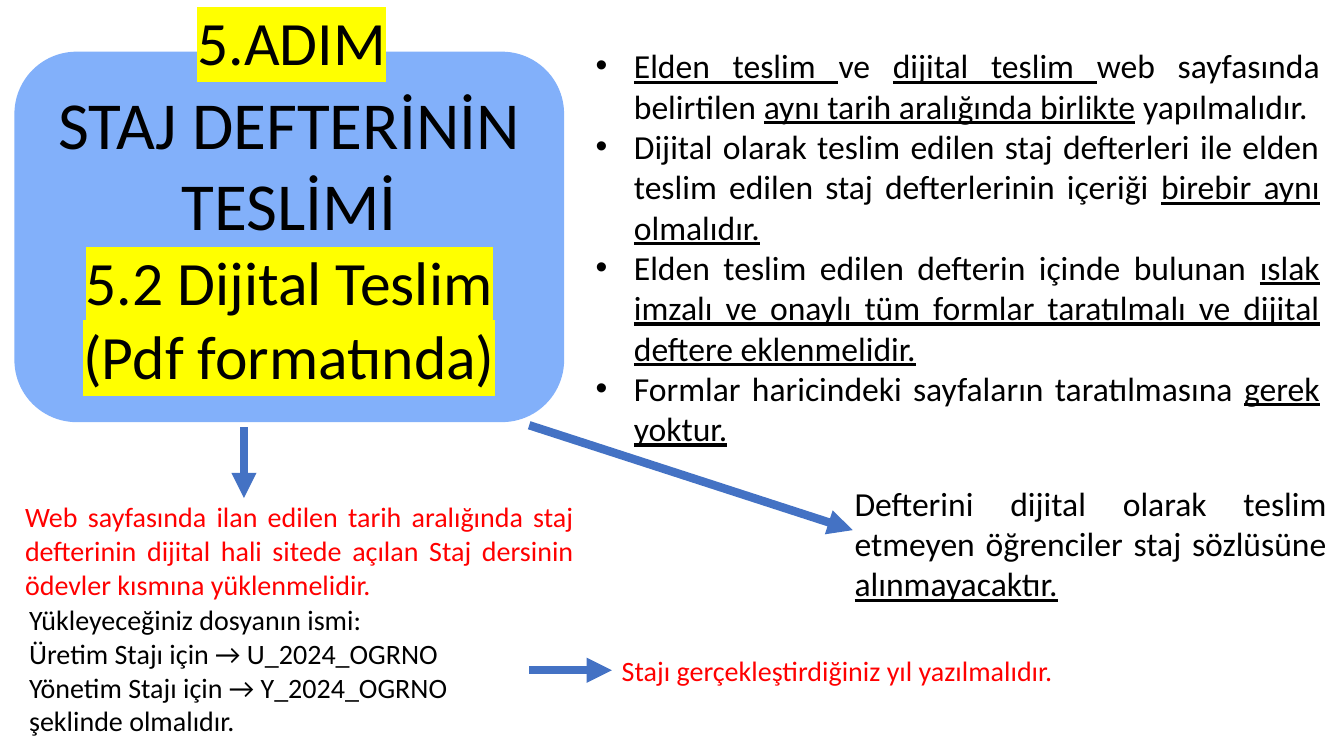
from collections import namedtuple

from lxml import etree
from pptx import Presentation
from pptx.dml.color import RGBColor
from pptx.enum.shapes import MSO_CONNECTOR as Connector, MSO_SHAPE as Shape
from pptx.enum.text import MSO_ANCHOR as Anchor, PP_ALIGN as Align
from pptx.oxml.ns import qn
from pptx.util import Inches, Pt

BLACK = RGBColor(0x00, 0x00, 0x00)
RED = RGBColor(0xFF, 0x00, 0x00)
YELLOW = RGBColor(0xFF, 0xFF, 0x00)
CARD_BLUE = RGBColor(0x82, 0xB0, 0xFA)
ARROW_BLUE = RGBColor(0x44, 0x72, 0xC4)
FONT = "Calibri"

# The slide is a grid of 40 columns by 40 rows
WIDTH, HEIGHT = Inches(13.33), Inches(7.5)
COLUMN, ROW = WIDTH / 40, HEIGHT / 40

Box = namedtuple("Box", "left top width height")


def within(box, left, top, width, height):
    return Box(box.left + left, box.top + top, width, height)


def to_lengths(box):
    return (int(box.left * COLUMN), int(box.top * ROW),
            int(box.width * COLUMN), int(box.height * ROW))


def write(frame, text, size=20, color=BLACK, align=Align.JUSTIFY,
          highlight=None, bullet=False, spacing=None):
    """Add one paragraph per line; words between asterisks are underlined."""
    for line in text.split("\n"):
        first = frame.paragraphs[0]
        paragraph = frame.add_paragraph() if first.runs else first
        paragraph.alignment = align
        if spacing:
            paragraph.line_spacing = spacing
        if bullet:
            properties = paragraph._p.get_or_add_pPr()
            indent = Inches(0.38)
            properties.set("marL", str(indent))
            properties.set("indent", str(-indent))
            etree.SubElement(properties, qn("a:buFont"), typeface="Arial")
            etree.SubElement(properties, qn("a:buChar"), char="•")
        for index, part in enumerate(line.split("*")):
            if not part:
                continue
            run = paragraph.add_run()
            run.text = part
            font = run.font
            font.name, font.size = FONT, Pt(size)
            font.color.rgb = color
            if index % 2:
                font.underline = True
            if highlight:
                mark = etree.Element(qn("a:highlight"))
                etree.SubElement(mark, qn("a:srgbClr"), val=str(highlight))
                font._element.find(qn("a:solidFill")).addnext(mark)


def add_text(slide, box, text, anchor=Anchor.TOP, **text_format):
    shape = slide.shapes.add_textbox(*to_lengths(box))
    shape.text_frame.word_wrap = True
    shape.text_frame.vertical_anchor = anchor
    write(shape.text_frame, text, **text_format)
    return shape


def add_arrow(slide, box, start, end):
    """Draw an arrow between two points given relative to the box."""
    x1, y1, x2, y2 = (
        int(value) for column, row in (start, end)
        for value in ((box.left + column) * COLUMN, (box.top + row) * ROW))
    arrow = slide.shapes.add_connector(Connector.STRAIGHT, x1, y1, x2, y2)
    arrow.line.color.rgb = ARROW_BLUE
    arrow.line.width = Pt(6)
    etree.SubElement(arrow.line._get_or_add_ln(), qn("a:tailEnd"), type="triangle")
    etree.SubElement(arrow._element.spPr, qn("a:effectLst"))
    return arrow


# Blue card with the step number across its top edge
def add_heading(slide, box):
    card_box = within(box, 0, 2.77, box.width, box.height - 2.77)
    card = slide.shapes.add_shape(Shape.ROUNDED_RECTANGLE, *to_lengths(card_box))
    card.shadow.inherit = False
    card.fill.solid()
    card.fill.fore_color.rgb = CARD_BLUE
    card.line.color.rgb = CARD_BLUE
    card.line.width = Pt(1)
    frame = card.text_frame
    frame.word_wrap = True
    frame.vertical_anchor = Anchor.MIDDLE
    write(frame, "STAJ DEFTERİNİN TESLİMİ", size=48, align=Align.CENTER)
    write(frame, "5.2 Dijital Teslim\n(Pdf formatında)", size=44,
          align=Align.CENTER, highlight=YELLOW)
    add_text(slide, within(box, 4.5, 0, 7.47, 4.85), "5.ADIM", Anchor.MIDDLE,
             size=44, align=Align.CENTER, highlight=YELLOW, spacing=0.9)


# Bulleted delivery rules
def add_rules(slide, box):
    add_text(slide, box, "\n".join((
        "*Elden teslim *ve *dijital teslim *web sayfasında belirtilen "
        "*aynı tarih aralığında birlikte* yapılmalıdır.",
        "Dijital olarak teslim edilen staj defterleri ile elden teslim edilen "
        "staj defterlerinin içeriği *birebir aynı olmalıdır.*",
        "Elden teslim edilen defterin içinde bulunan *ıslak imzalı ve onaylı "
        "tüm formlar taratılmalı ve dijital deftere eklenmelidir.*",
        "Formlar haricindeki sayfaların taratılmasına *gerek yoktur.*",
    )), size=24, bullet=True)


# Upload instructions and file names
def add_upload(slide, box):
    add_arrow(slide, box, (6.81, 0), (6.81, 3.75))
    add_text(slide, within(box, 0, 3.59, 16.92, 5.92),
             "Web sayfasında ilan edilen tarih aralığında staj defterinin "
             "dijital hali sitede açılan Staj dersinin ödevler kısmına "
             "yüklenmelidir.", color=RED)
    add_text(slide, within(box, 0.12, 9.03, box.width, 7.73),
             "Yükleyeceğiniz dosyanın ismi:\n"
             "Üretim Stajı için → U_2024_OGRNO\n"
             "Yönetim Stajı için → Y_2024_OGRNO\n"
             "şeklinde olmalıdır.")


# Consequence of a missing digital delivery
def add_warning(slide, box):
    add_text(slide, within(box, 9.39, 2.77, 14.64, 6.99),
             "Defterini dijital olarak teslim etmeyen öğrenciler staj "
             "sözlüsüne *alınmayacaktır.*", size=24)
    add_arrow(slide, box, (0, 0), (9.63, 5.55))


# Note on the year in the file name
def add_year_note(slide, box):
    note = add_text(slide, within(box, 2.46, 0, box.width - 2.46, box.height),
                    "Stajı gerçekleştirdiğiniz yıl yazılmalıdır.", color=RED)
    middle = box.height / 2
    arrow = add_arrow(slide, box, (0, middle), (2.46, middle))
    arrow.end_connect(note, 1)


def main():
    presentation = Presentation()
    presentation.slide_width, presentation.slide_height = WIDTH, HEIGHT
    slide = presentation.slides.add_slide(presentation.slide_layouts[6])
    add_heading(slide, Box(0.45, 0, 16.32, 22.3))
    add_rules(slide, Box(17.43, 2.13, 22.14, 24.27))
    add_upload(slide, Box(0.45, 22.6, 20, 16.76))
    add_warning(slide, Box(15.75, 22.5, 24.03, 9.76))
    add_year_note(slide, Box(15.75, 34.29, 21.45, 2.35))
    presentation.save("out.pptx")


if __name__ == "__main__":
    main()
